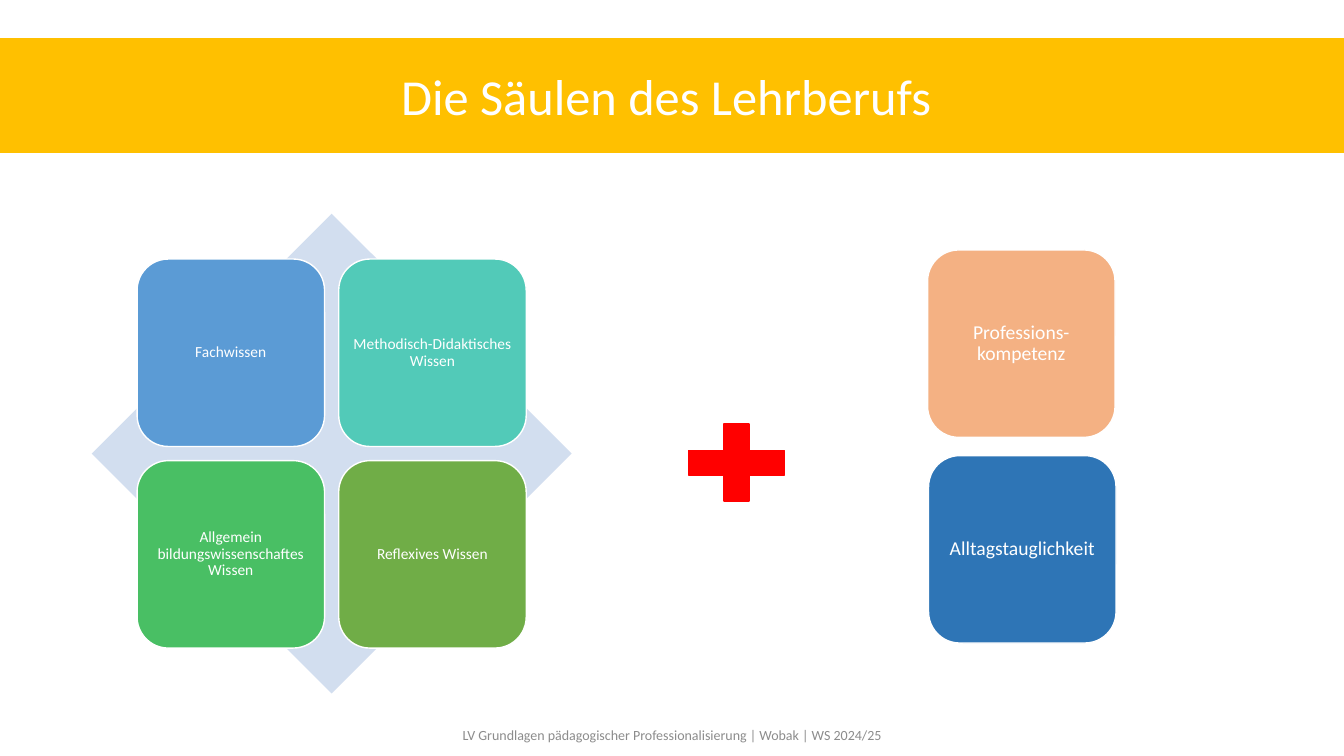
from dataclasses import dataclass

from pptx import Presentation
from pptx.dml.color import RGBColor
from pptx.enum.shapes import MSO_SHAPE
from pptx.enum.text import MSO_ANCHOR, MSO_AUTO_SIZE, PP_ALIGN
from pptx.util import Inches, Pt

DIAMOND, TILE, PLUS = MSO_SHAPE.DIAMOND, MSO_SHAPE.ROUNDED_RECTANGLE, MSO_SHAPE.MATH_PLUS
MIDDLE, CENTER, NO_AUTOFIT = MSO_ANCHOR.MIDDLE, PP_ALIGN.CENTER, MSO_AUTO_SIZE.NONE

TITLE = "Die Säulen des Lehrberufs "
KNOWLEDGE = [
    [("Fachwissen", "5B9BD5"), ("Methodisch-Didaktisches Wissen", "52CAB8")],
    [("Allgemein bildungswissenschaftes Wissen", "49BF64"), ("Reflexives Wissen", "70AD47")],
]
# text, fill, left, top
COMPETENCES = [
    ("Professions-kompetenz", "F4B183", 9.2, 2.48),
    ("Alltagstauglichkeit", "2E75B6", 9.21, 4.52),
]
FOOTER = "LV Grundlagen pädagogischer Professionalisierung | Wobak | WS 2024/25"


@dataclass(frozen=True)
class Theme:
    font: str = "Calibri"
    white: str = "FFFFFF"
    band: str = "FFC000"
    diamond: str = "D2DEEF"
    plus: str = "FF0000"
    footer: str = "8C8C8C"
    title_size: int = 36
    knowledge_size: int = 11
    competence_size: int = 14
    footer_size: int = 10


THEME = Theme()
SLIDE_W, SLIDE_H = 13.33, 7.5
BAND_TOP, BAND_H = 0.38, 1.13
CENTER_X, CENTER_Y = 3.29, 4.5
DIAMOND_SIZE, TILE_SIZE, GAP = 4.76, 1.86, 0.14
FOOTER_W, FOOTER_H, FOOTER_TOP = 4.5, 0.4, 7.1


def paint(shape, fill, line=None):
    shape.fill.solid()
    shape.fill.fore_color.rgb = RGBColor.from_string(fill)
    if line:
        shape.line.color.rgb = RGBColor.from_string(line)
        shape.line.width = Pt(1)
    else:
        shape.line.fill.background()


def write(shape, text, size, color, line_spacing=0.9, inset=None):
    frame = shape.text_frame
    frame.text = text
    frame.word_wrap = True
    frame.auto_size = NO_AUTOFIT
    frame.vertical_anchor = MIDDLE
    if inset is not None:
        frame.margin_left = frame.margin_right = Inches(inset)
        frame.margin_top = frame.margin_bottom = Inches(inset)
    paragraph = frame.paragraphs[0]
    paragraph.alignment = CENTER
    paragraph.line_spacing = line_spacing
    paragraph.font.name = THEME.font
    paragraph.font.size = Pt(size)
    paragraph.font.color.rgb = RGBColor.from_string(color)


def add_figure(slide, kind, box, fill, line=None):
    figure = slide.shapes.add_shape(kind, *map(Inches, box))
    figure.shadow.inherit = False
    paint(figure, fill, line)
    return figure


def add_tile(slide, text, fill, left, top, size, inset):
    tile = add_figure(slide, TILE, (left, top, TILE_SIZE, TILE_SIZE), fill, THEME.white)
    write(tile, text, size, THEME.white, inset=inset)


def add_title(slide):
    band = slide.shapes.title
    band.left, band.top = 0, Inches(BAND_TOP)
    band.width, band.height = Inches(SLIDE_W), Inches(BAND_H)
    paint(band, THEME.band, THEME.band)
    write(band, TITLE, THEME.title_size, THEME.white, line_spacing=1.0)


def add_knowledge(slide):
    half = DIAMOND_SIZE / 2
    add_figure(slide, DIAMOND,
               (CENTER_X - half, CENTER_Y - half, DIAMOND_SIZE, DIAMOND_SIZE), THEME.diamond)
    reach = TILE_SIZE + GAP / 2
    pitch = TILE_SIZE + GAP
    for row, tiles in enumerate(KNOWLEDGE):
        for column, (text, fill) in enumerate(tiles):
            add_tile(slide, text, fill, CENTER_X - reach + column * pitch,
                     CENTER_Y - reach + row * pitch, THEME.knowledge_size, 0.05)


def add_footer(slide):
    footer = slide.shapes.add_textbox(Inches((SLIDE_W - FOOTER_W) / 2), Inches(FOOTER_TOP),
                                      Inches(FOOTER_W), Inches(FOOTER_H))
    write(footer, FOOTER, THEME.footer_size, THEME.footer)


def main():
    deck = Presentation()
    deck.slide_width, deck.slide_height = Inches(SLIDE_W), Inches(SLIDE_H)
    slide = deck.slides.add_slide(deck.slide_layouts.get_by_name("Title Only"))
    add_title(slide)
    add_knowledge(slide)
    for text, fill, left, top in COMPETENCES:
        add_tile(slide, text, fill, left, top, THEME.competence_size, 0.06)
    add_figure(slide, PLUS, (6.66, 4.07, 1.29, 1.04), THEME.plus, THEME.plus)
    add_footer(slide)
    deck.save("out.pptx")


if __name__ == "__main__":
    main()
